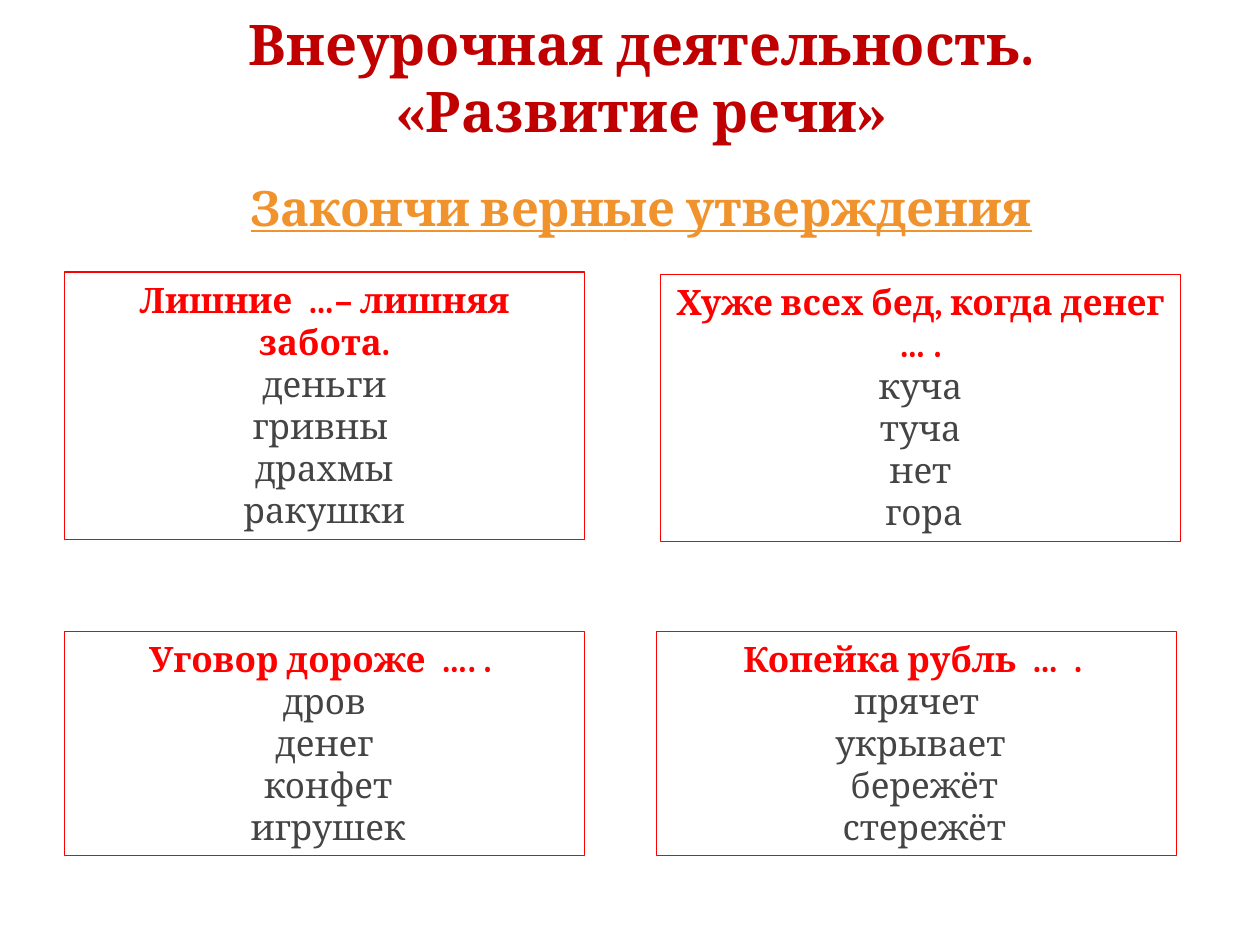
from pptx import Presentation
from pptx.dml.color import RGBColor
from pptx.enum.shapes import MSO_SHAPE
from pptx.enum.text import MSO_ANCHOR, MSO_AUTO_SIZE, PP_ALIGN
from pptx.oxml.ns import qn
from pptx.util import Inches, Pt

RECTANGLE = MSO_SHAPE.RECTANGLE
MIDDLE, TOP = MSO_ANCHOR.MIDDLE, MSO_ANCHOR.TOP
FIXED, GROW = MSO_AUTO_SIZE.NONE, MSO_AUTO_SIZE.SHAPE_TO_FIT_TEXT
CENTER = PP_ALIGN.CENTER

DARK_RED = RGBColor(0xC0, 0x00, 0x00)
ORANGE = RGBColor(0xF0, 0x93, 0x2C)
RED = RGBColor(0xFF, 0x00, 0x00)
GRAY = RGBColor(0x45, 0x44, 0x45)

HEADING_LEFT, HEADING_WIDTH, HEADING_HEIGHT = 0.59, 9, 0.5
CARD_WIDTH = 4.13

CARDS = [
    (0.51, 2.16, 2.12, "Лишние  …– лишняя забота.",
     ["деньги", "гривны ", "драхмы", "ракушки"]),
    (5.24, 2.18, 2.12, "Хуже всех бед, когда денег … .",
     ["куча", "туча", "нет", " гора"]),
    (0.51, 5.01, 1.78, "Уговор дороже  …. . ",
     ["дров", "денег", " конфет", " игрушек"]),
    (5.21, 5.01, 1.78, "Копейка рубль  …  . ",
     ["прячет", " укрывает", "  бережёт", "  стережёт"]),
]


class QuizSlide:
    """Holds the style and the slide of proverb questions."""

    font_name = "Cambria"

    def __init__(self, deck):
        self.slide = deck.slides.add_slide(deck.slide_layouts[1])

    def fill_text(self, frame, lines, anchor, fit):
        frame.word_wrap = True
        frame.auto_size = fit
        frame.vertical_anchor = anchor
        for index, (text, size, color, bold, underline) in enumerate(lines):
            paragraph = frame.add_paragraph() if index else frame.paragraphs[0]
            properties = paragraph._p.get_or_add_pPr()
            properties.set("marL", "0")
            properties.set("indent", "0")
            properties.append(properties.makeelement(qn("a:buNone"), {}))
            paragraph.alignment = CENTER
            paragraph.space_before = Pt(0)
            run = paragraph.add_run()
            run.text = text
            run.font.name = self.font_name
            run.font.size = Pt(size)
            run.font.bold = bold
            run.font.underline = underline
            run.font.color.rgb = color

    def heading(self, placeholder, top, texts, size, color, underline=False):
        placeholder.left, placeholder.top = Inches(HEADING_LEFT), Inches(top)
        placeholder.width = Inches(HEADING_WIDTH)
        placeholder.height = Inches(HEADING_HEIGHT)
        lines = [(text, size, color, True, underline) for text in texts]
        self.fill_text(placeholder.text_frame, lines, MIDDLE, FIXED)

    def card(self, left, top, height, question, answers):
        box = self.slide.shapes.add_shape(
            RECTANGLE, Inches(left), Inches(top), Inches(CARD_WIDTH), Inches(height))
        box.shadow.inherit = False
        box.fill.background()
        box.line.color.rgb = RED
        box.line.width = Pt(0.75)
        lines = [(question, 20, RED, True, False)]
        lines += [(answer, 20, GRAY, False, False) for answer in answers]
        self.fill_text(box.text_frame, lines, TOP, GROW)


def main():
    deck = Presentation()
    deck.slide_width, deck.slide_height = Inches(10), Inches(7.5)
    quiz = QuizSlide(deck)
    quiz.heading(quiz.slide.shapes.title, 0.36,
                 ["Внеурочная деятельность.", "«Развитие речи»"], 32, DARK_RED)
    quiz.heading(quiz.slide.placeholders[1], 1.39,
                 ["Закончи верные утверждения"], 27.9, ORANGE, underline=True)
    for card in CARDS:
        quiz.card(*card)
    deck.save("out.pptx")


if __name__ == "__main__":
    main()
